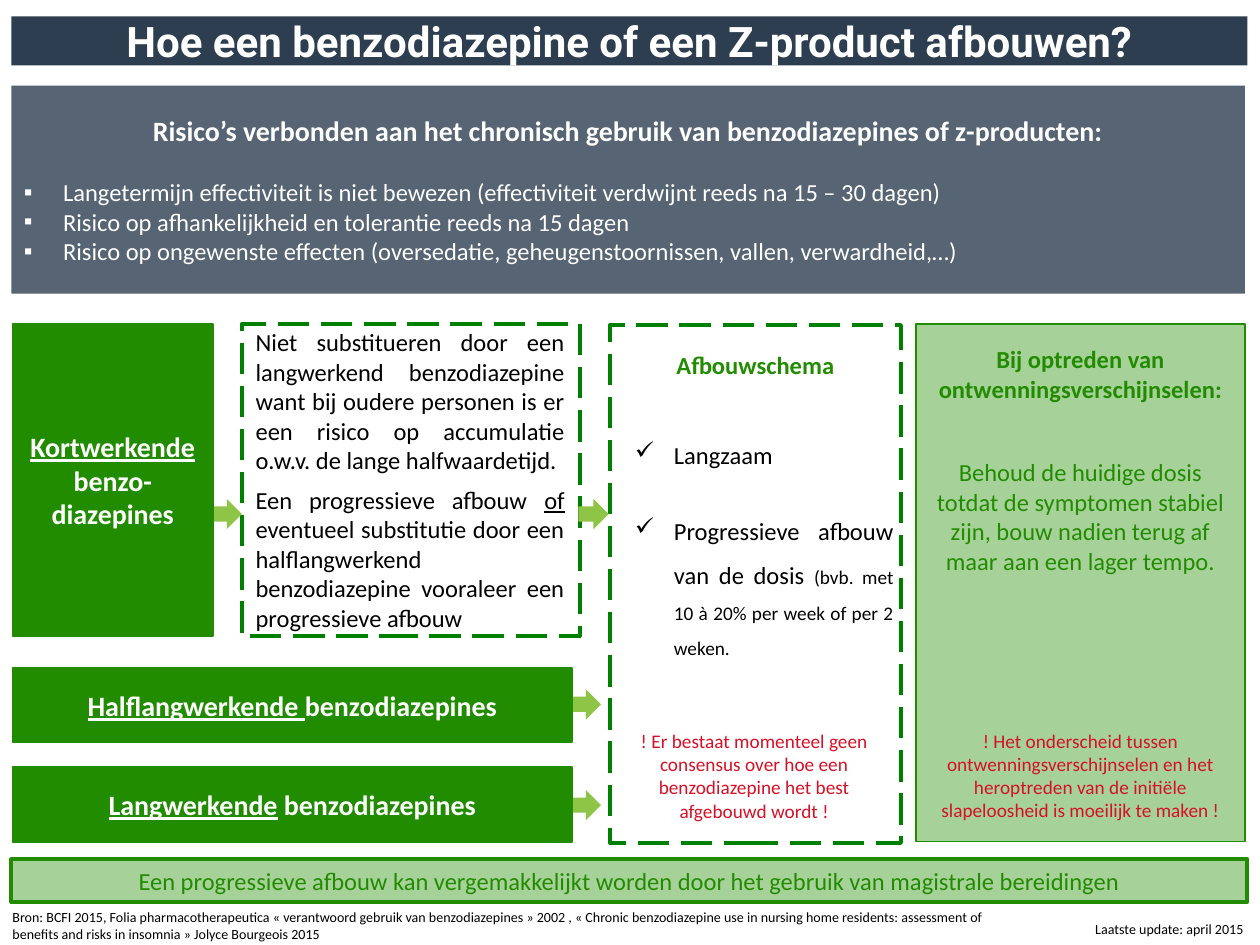
import pptx
import pptx.util
import pptx.dml.color
import pptx.enum.shapes
import pptx.enum.text
import pptx.oxml.ns
import lxml.etree

Inches = pptx.util.Inches
Pt = pptx.util.Pt
RGBColor = pptx.dml.color.RGBColor
Shape = pptx.enum.shapes.MSO_SHAPE
Align = pptx.enum.text.PP_ALIGN
Anchor = pptx.enum.text.MSO_ANCHOR
qn = pptx.oxml.ns.qn

NAVY = RGBColor(0x2C, 0x3E, 0x50)
GREEN = RGBColor(0x22, 0x8C, 0x00)
DASH_GREEN = RGBColor(0x00, 0x80, 0x00)
LIME = RGBColor(0x8E, 0xC5, 0x47)
RED = RGBColor(0xD7, 0x10, 0x26)
WHITE = RGBColor(0xFF, 0xFF, 0xFF)
BLACK = RGBColor(0x00, 0x00, 0x00)


def paint(box, fill=None, opacity=100, line=None, width=1):
    if fill is None:
        box.fill.background()
    else:
        box.fill.solid()
        box.fill.fore_color.rgb = fill
        if opacity < 100:
            color = box.fill._xPr.find(qn("a:solidFill"))[0]
            lxml.etree.SubElement(color, qn("a:alpha"), val=str(opacity * 1000))
    if line is None:
        box.line.fill.background()
    else:
        box.line.color.rgb = line
        box.line.width = Pt(width)


def write(box, paragraphs, size, color, bold=False, align=Align.CENTER,
          anchor=Anchor.MIDDLE, after=0, font="Calibri"):
    frame = box.text_frame
    frame.word_wrap = True
    frame.auto_size = pptx.enum.text.MSO_AUTO_SIZE.NONE
    frame.vertical_anchor = anchor
    for number, texts in enumerate(paragraphs):
        para = frame.paragraphs[0] if number == 0 else frame.add_paragraph()
        para.alignment = align
        para.space_before = Pt(0)
        para.space_after = Pt(after)
        for text in texts:
            span = para.add_run()
            span.text = text
            span.font.name = font
            span.font.size = Pt(size)
            span.font.bold = bold
            span.font.color.rgb = color
    return frame.paragraphs


deck = pptx.Presentation()
deck.slide_width = Inches(10)
deck.slide_height = Inches(7.5)
page = deck.slides.add_slide(deck.slide_layouts[1])
shapes = page.shapes

title = shapes.title
title.left, title.top, title.width, title.height = map(Inches, (0.09, 0.13, 9.81, 0.39))
paint(title, NAVY)
write(title, [["Hoe een benzodiazepine of een Z-product afbouwen?"]], 24, WHITE, True,
      font="Roboto")

risks = page.placeholders[1]
risks.left, risks.top, risks.width, risks.height = map(Inches, (0.09, 0.68, 9.79, 1.65))
paint(risks, NAVY, 80)
risk_paras = write(risks, [
    ["Risico’s verbonden aan het chronisch gebruik van benzodiazepines of z-producten:"],
    ["Langetermijn effectiviteit is niet bewezen (effectiviteit verdwijnt reeds na 15 – 30 dagen)"],
    ["Risico op afhankelijkheid en tolerantie reeds na 15 dagen"],
    ["Risico op ongewenste effecten (oversedatie, geheugenstoornissen, vallen, verwardheid,…)"],
], 14, WHITE, align=Align.LEFT)
heading = risk_paras[0]
heading.alignment = Align.CENTER
heading.space_after = Pt(17)
heading.runs[0].font.size = Pt(16)
heading.runs[0].font.bold = True
heading_properties = heading._p.get_or_add_pPr()
heading_properties.set("marL", "0")
heading_properties.set("indent", "0")
lxml.etree.SubElement(heading_properties, qn("a:buNone"))

for left, top, width, height in [(1.92, 2.57, 2.68, 2.48), (4.84, 2.58, 2.31, 4.11)]:
    frame_box = shapes.add_shape(Shape.RECTANGLE, Inches(left), Inches(top),
                                 Inches(width), Inches(height))
    frame_box.shadow.inherit = False
    paint(frame_box, line=DASH_GREEN, width=2.25)
    frame_box.line.dash_style = pptx.enum.dml.MSO_LINE.LONG_DASH

for left, top in [(1.68, 3.96), (4.59, 3.96), (4.53, 5.47), (4.53, 6.27)]:
    arrow = shapes.add_shape(Shape.RIGHT_ARROW, Inches(left), Inches(top),
                             Inches(0.24), Inches(0.24))
    arrow.shadow.inherit = False
    paint(arrow, LIME)

for top, width, height, texts, underlined in [
    (2.57, 1.59, 2.48, ["Kortwerkende ", "benzo-diazepines"], 0),
    (5.3, 4.44, 0.59, ["Halflangwerkende ", "benzodiazepines"], 0),
    (6.09, 4.44, 0.59, ["Langwerkende", " benzodiazepines"], 0),
]:
    drug_class = shapes.add_shape(Shape.RECTANGLE, Inches(0.1), Inches(top),
                                  Inches(width), Inches(height))
    drug_class.shadow.inherit = False
    paint(drug_class, GREEN, line=GREEN)
    class_paras = write(drug_class, [texts], 16, WHITE, True)
    class_paras[0].runs[underlined].font.underline = True

withdrawal = shapes.add_shape(Shape.RECTANGLE, Inches(7.27), Inches(2.57),
                              Inches(2.61), Inches(4.11))
withdrawal.shadow.inherit = False
paint(withdrawal, GREEN, 40, GREEN)
symptom_paras = write(withdrawal, [
    ["Bij optreden van ontwenningsverschijnselen:"],
    ["Behoud de huidige dosis totdat de symptomen stabiel zijn, bouw nadien terug af "
     "maar aan een lager tempo."],
    ["! Het onderscheid tussen ontwenningsverschijnselen en het heroptreden van de "
     "initiële slapeloosheid is moeilijk te maken !"],
], 14, GREEN, after=12)
symptom_paras[0].runs[0].font.bold = True
symptom_paras[0].space_after = Pt(31)
symptom_paras[1].space_after = Pt(88)
symptom_paras[2].runs[0].font.size = Pt(11)
symptom_paras[2].runs[0].font.color.rgb = RED

conclusion = shapes.add_shape(Shape.RECTANGLE, Inches(0.09), Inches(6.82),
                              Inches(9.81), Inches(0.34))
conclusion.shadow.inherit = False
paint(conclusion, GREEN, 40, GREEN, 2.25)
write(conclusion, [["Een progressieve afbouw kan vergemakkelijkt worden door het gebruik van "
                    "magistrale bereidingen"]], 14, GREEN)

text_paras = []
for position, paragraphs, size, color, bold, align, after in [
    ((1.93, 2.55, 2.65, 2.54), [
        ["Niet substitueren door een langwerkend benzodiazepine want bij oudere personen is er "
         "een risico op accumulatie o.w.v. de lange halfwaardetijd."],
        ["Een progressieve afbouw ", "of", " eventueel substitutie door een halflangwerkend "
         "benzodiazepine vooraleer een progressieve afbouw"],
    ], 14, BLACK, False, Align.JUSTIFY, 6),
    ((4.94, 3.33, 2.25, 1.97), [
        ["Langzaam"],
        ["Progressieve afbouw van de dosis ", "(bvb. met 10 à 20% per week of per 2 weken."],
    ], 14, BLACK, False, Align.JUSTIFY, 18),
    ((4.99, 2.73, 2.01, 0.34), [["Afbouwschema"]], 14, GREEN, True, Align.CENTER, 0),
    ((4.84, 5.74, 2.29, 0.84), [
        ["! Er bestaat momenteel geen consensus over hoe een benzodiazepine het best "
         "afgebouwd wordt !"],
    ], 11, RED, False, Align.CENTER, 0),
    ((7.87, 7.26, 2.1, 0.24), [["Laatste update: april 2015"]], 8, BLACK, False, Align.RIGHT, 0),
    ((0, 7.16, 8.15, 0.34), [
        ["Bron: BCFI 2015, Folia pharmacotherapeutica « verantwoord gebruik van "
         "benzodiazepines » 2002 , « Chronic benzodiazepine use in nursing home residents: "
         "assessment of benefits and risks in insomnia » Jolyce Bourgeois 2015"],
    ], 8, BLACK, False, Align.LEFT, 0),
]:
    text_box = shapes.add_textbox(*map(Inches, position))
    text_paras.append(write(text_box, paragraphs, size, color, bold, align, Anchor.TOP, after))

advice_paras, schedule_paras = text_paras[:2]
advice_paras[1].runs[1].font.underline = True
schedule_paras[1].runs[1].font.size = Pt(11)
for para in schedule_paras:
    para.line_spacing = 1.5

for bullet, paras in [("▪", risk_paras[1:]), ("✓", schedule_paras)]:
    for para in paras:
        properties = para._p.get_or_add_pPr()
        properties.set("marL", str(Inches(0.31)))
        properties.set("indent", str(Inches(-0.31)))
        lxml.etree.SubElement(properties, qn("a:buChar"), char=bullet)

deck.save("out.pptx")
